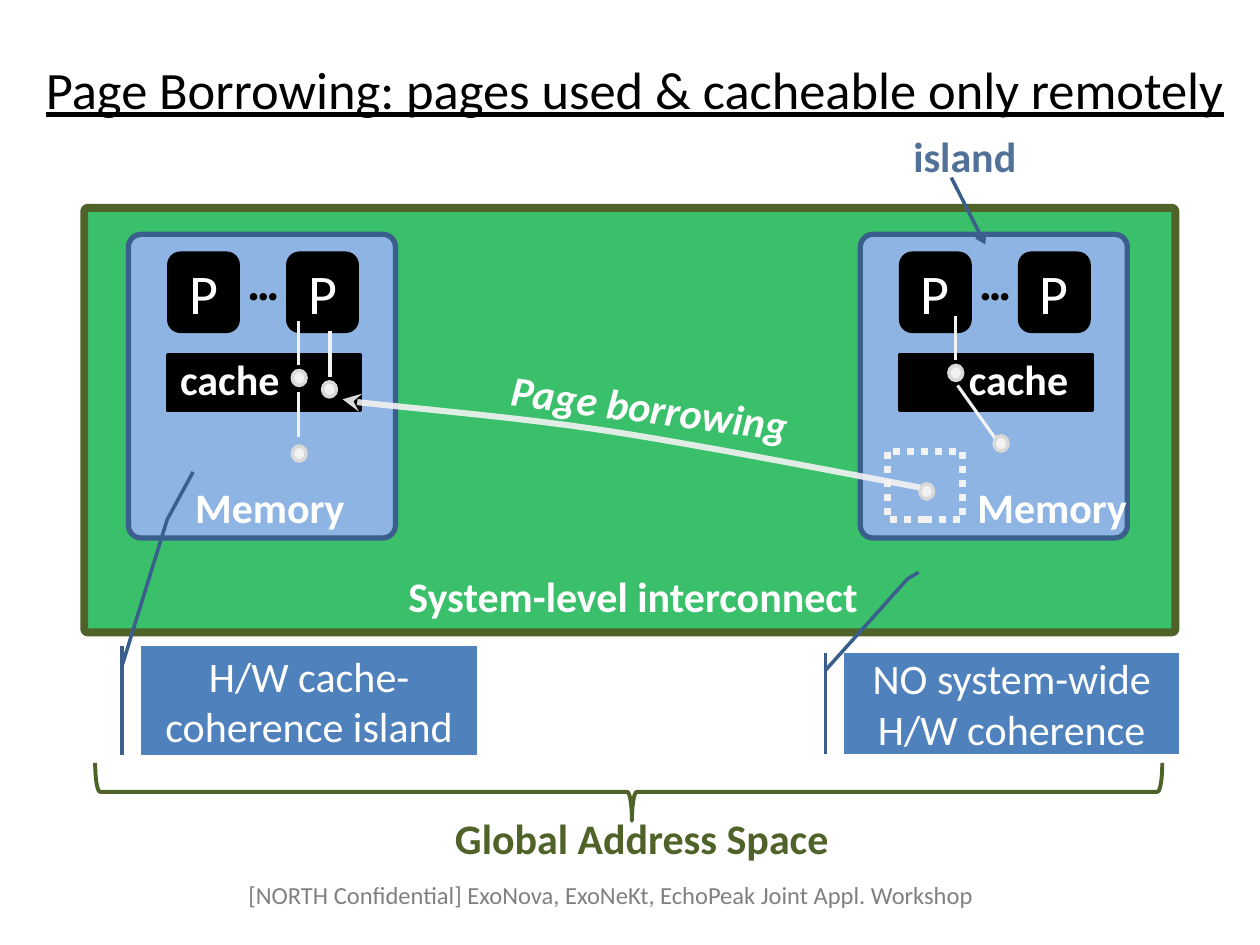
import pptx
import pptx.util
import pptx.dml.color
import pptx.enum.dml
import pptx.enum.shapes
import pptx.enum.text
import pptx.oxml
import pptx.oxml.ns
import lxml.etree

Pt = pptx.util.Pt
RGBColor = pptx.dml.color.RGBColor
SHAPE = pptx.enum.shapes.MSO_SHAPE
ANCHOR = pptx.enum.text.MSO_ANCHOR
ALIGN = pptx.enum.text.PP_ALIGN
qn = pptx.oxml.ns.qn

BLACK = RGBColor(0x00, 0x00, 0x00)
WHITE = RGBColor(0xFF, 0xFF, 0xFF)
GRAY = RGBColor(0x80, 0x80, 0x80)
GREEN = RGBColor(0x3A, 0xBF, 0x6B)
OLIVE = RGBColor(0x4F, 0x62, 0x28)
SKY = RGBColor(0x8E, 0xB4, 0xE3)
NAVY = RGBColor(0x3A, 0x5F, 0x8C)
SLATE = RGBColor(0x51, 0x71, 0x99)
BLUE = RGBColor(0x4F, 0x81, 0xBD)
PALE = RGBColor(0xF2, 0xF2, 0xF2)
SILVER = RGBColor(0xD9, 0xD9, 0xD9)

deck = pptx.Presentation()
deck.slide_width, deck.slide_height = Pt(720), Pt(540)
page = deck.slides.add_slide(deck.slide_layouts[6])


def draw(kind, frame, fill, line, width, adjustments=()):
    """Add a preset shape; a fill of None leaves it open."""
    shape = page.shapes.add_shape(kind, *map(Pt, frame))
    shape.shadow.inherit = False
    if fill is None:
        shape.fill.background()
    else:
        shape.fill.solid()
        shape.fill.fore_color.rgb = fill
    shape.line.color.rgb = line
    shape.line.width = Pt(width)
    for index, value in enumerate(adjustments):
        shape.adjustments[index] = value
    return shape


def write(shape, lines, size, color, frame_format=None, para_format=None, **font_format):
    frame = shape.text_frame
    for name, value in {"word_wrap": False, **(frame_format or {})}.items():
        setattr(frame, name, value)
    for index, line in enumerate(lines):
        para = frame.add_paragraph() if index else frame.paragraphs[0]
        for name, value in {"alignment": ALIGN.CENTER, **(para_format or {})}.items():
            setattr(para, name, value)
        span = para.add_run()
        span.text = line
        span.font.color.rgb = color
        for name, value in {"name": "Calibri", "size": Pt(size), **font_format}.items():
            setattr(span.font, name, value)


# System-level interconnect behind everything
draw(SHAPE.ROUNDED_RECTANGLE, (48.2, 118.8, 623.5, 242.6), GREEN, OLIVE, 4.5, [0.008])

# Two coherence islands, alike but for the place of the cache label
ISLAND_STEP = 418.2
for island, cache_inset in enumerate((7.2, 39.6)):
    left = 73.4 + island * ISLAND_STEP
    draw(SHAPE.ROUNDED_RECTANGLE, (left, 133.9, 152.6, 173.5), SKY, NAVY, 3, [0.047])
    for dot in range(3):
        draw(SHAPE.OVAL, (left + 70.4 + dot * 5.5, 168.5, 2.2, 2.2), BLACK, BLACK, 2)
    cache = draw(SHAPE.ROUNDED_RECTANGLE, (left + 22.5, 203, 110.2, 31.7), BLACK, BLACK, 2, [0])
    write(cache, ["cache"], 24, WHITE,
          {"vertical_anchor": ANCHOR.TOP, "margin_top": Pt(15.6), "margin_left": Pt(cache_inset)},
          {"alignment": ALIGN.LEFT, "line_spacing": Pt(12)}, bold=True)
    for processor in range(2):
        core = draw(SHAPE.ROUNDED_RECTANGLE, (left + 23.1 + processor * 68, 144.7, 39.6, 44.6),
                    BLACK, BLACK, 2)
        write(core, ["P"], 32, WHITE, {"vertical_anchor": ANCHOR.MIDDLE})

# Callouts and the brace over the whole address space
callouts = [
    ((482.4, 373, 191.5, 57.6), [0.175, -0.056, -0.732, 0.189, -0.798, 0.222],
     ["NO system-wide", "H/W coherence"]),
    ((80.6, 369.4, 192.2, 61.9), [0.175, -0.056, -1.171, 0.078, -1.611, 0.155],
     ["H/W cache-coherence island"]),
]
for frame, adjustments, lines in callouts:
    callout = draw(SHAPE.LINE_CALLOUT_2_ACCENT_BAR, frame, BLUE, NAVY, 2, adjustments)
    write(callout, lines, 24, WHITE, {"word_wrap": True, "vertical_anchor": ANCHOR.MIDDLE})
brace = draw(SHAPE.RIGHT_BRACE, (342.7, 147.6, 33.1, 609.8), None, OLIVE, 2.25, [0.083, 0.497])
brace.rotation = 90

# Borrowed page frame
borrowed = draw(SHAPE.RECTANGLE, (506.9, 257.8, 43.2, 38.9), SKY, PALE, 4)
borrowed.line.dash_style = pptx.enum.dml.MSO_LINE.ROUND_DOT

# Free labels: frame, wording, size, colour, anchor, rotation, font format
bold = {"bold": True}
labels = [
    ((18, 9.4, 689.8, 62.6), "Page Borrowing: pages used & cacheable only remotely", 30, BLACK,
     ANCHOR.BOTTOM, 0, {"underline": True}),
    ((8.6, 496.8, 681.1, 28.8), "[NORTH Confidential] ExoNova, ExoNeKt, EchoPeak Joint Appl. Workshop",
     14, GRAY, ANCHOR.MIDDLE, 0, {}),
    ((224.6, 322.6, 274.3, 36), "System-level interconnect", 24, WHITE, ANCHOR.TOP, 0, bold),
    ((514.8, 71.3, 74.2, 36), "island", 24, SLATE, ANCHOR.TOP, 0, bold),
    ((104.4, 271.4, 100.8, 36), "Memory", 24, WHITE, ANCHOR.TOP, 0, bold),
    ((551.4, 271.4, 100.8, 36), "Memory", 24, WHITE, ANCHOR.TOP, 0, bold),
    ((283.7, 214.6, 175, 36), "Page borrowing", 24, WHITE, ANCHOR.TOP, 7.3,
     {"bold": True, "italic": True}),
    ((249.1, 460.8, 235.4, 36), "Global Address Space", 24, OLIVE, ANCHOR.TOP, 0, bold),
]
for frame, wording, size, color, anchor, rotation, font_format in labels:
    box = page.shapes.add_textbox(*map(Pt, frame))
    box.rotation = rotation
    # Narrow labels start at the left edge of their frame
    alignment = ALIGN.LEFT if wording in ("island", "Memory") else ALIGN.CENTER
    write(box, [wording], size, color, {"vertical_anchor": anchor},
          {"alignment": alignment}, **font_format)

# Straight links between processors, cached lines and memory pages
links = [
    ((543.6, 101.5, 563, 139.7), NAVY, 2),
    ((545.8, 180.7, 545.8, 205.9), PALE, 1.8),
    ((547.2, 220.3, 568.8, 250.6), PALE, 1.8),
    ((188.6, 189.4, 188.6, 215.3), PALE, 1.8),
    ((170.6, 183.6, 170.6, 208.8), PALE, 1.8),
    ((170.6, 223.9, 170.6, 249.8), PALE, 1.8),
]
for ends, color, width in links:
    link = page.shapes.add_connector(pptx.enum.shapes.MSO_CONNECTOR.STRAIGHT, *map(Pt, ends))
    link.line.color.rgb = color
    link.line.width = Pt(width)
    lxml.etree.SubElement(link._element.spPr, qn("a:effectLst"))
    if color == NAVY:
        lxml.etree.SubElement(link.line._get_or_add_ln(), qn("a:tailEnd"), type="arrow")

for left, top in [(542.2, 208.8), (568.1, 249.1), (184.3, 218.2),
                  (167, 211.7), (167, 254.9), (525.6, 276.5)]:
    draw(SHAPE.OVAL, (left, top, 7.9, 8.6), PALE, SILVER, 2)

# Borrowing arrow: two joined cubic curves, sampled evenly
curves = [
    [(195.8, 228.2), (184.3, 229), (286.6, 236.9), (342, 245.5)],
    [(342, 245.5), (396.7, 253.4), (524.9, 278.6), (525.6, 278.6)],
]
STEPS = 12
track = []
for curve in curves:
    for step in range(1, STEPS + 1):
        t = step / STEPS
        weights = ((1 - t) ** 3, 3 * t * (1 - t) ** 2, 3 * t * t * (1 - t), t ** 3)
        track.append(tuple(Pt(sum(w * point[axis] for w, point in zip(weights, curve)))
                           for axis in (0, 1)))
builder = page.shapes.build_freeform(*map(Pt, curves[0][0]))
builder.add_line_segments(track, close=False)
arrow = builder.convert_to_shape()
arrow.shadow.inherit = False
arrow.fill.background()
arrow.line.color.rgb = PALE
arrow.line.width = Pt(3.5)
outline = arrow.line._get_or_add_ln()
lxml.etree.SubElement(outline.find(".//" + qn("a:srgbClr")), qn("a:alpha"), val="90000")
lxml.etree.SubElement(outline, qn("a:headEnd"), type="stealth")

deck.save("out.pptx")
